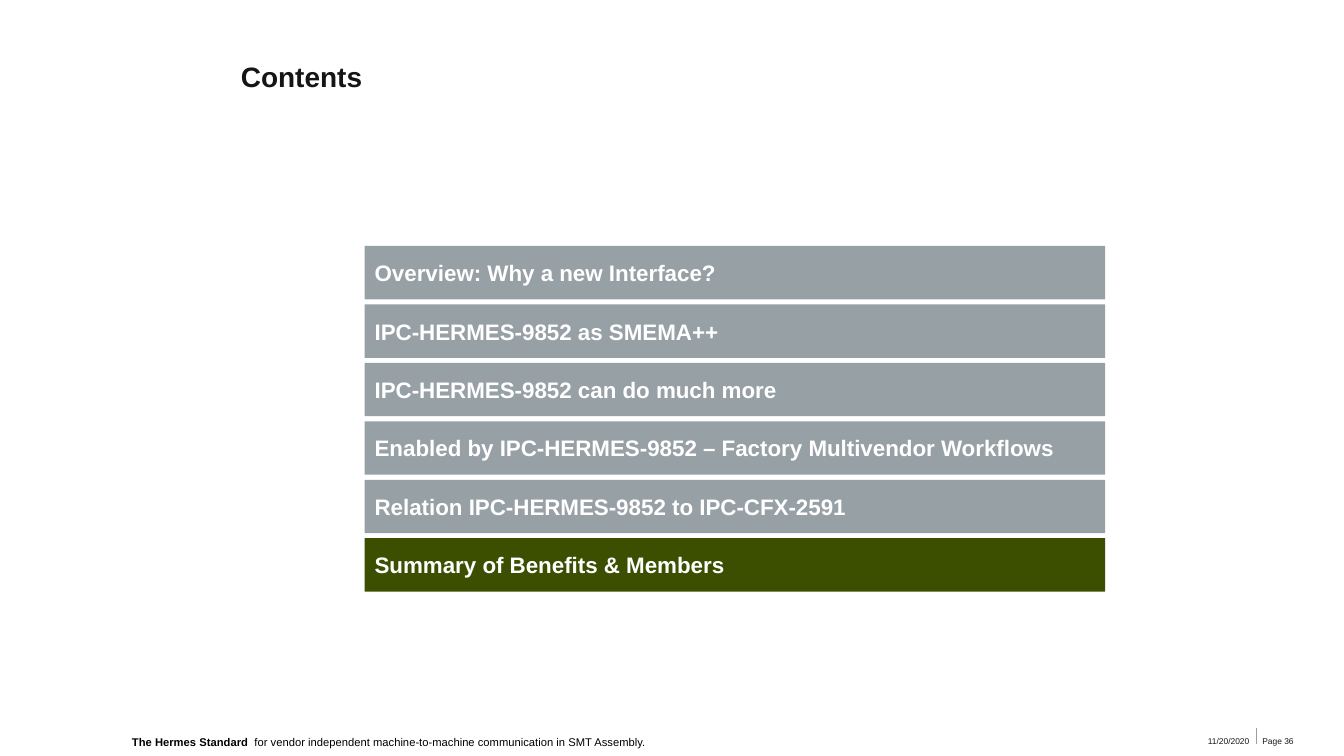
from pptx import Presentation
from pptx.dml.color import RGBColor as RGB
from pptx.enum.shapes import MSO_CONNECTOR as CONN, MSO_SHAPE as SHAPE
from pptx.enum.text import MSO_ANCHOR as ANCHOR, PP_ALIGN as ALIGN
from pptx.oxml.ns import qn
from pptx.util import Inches, Pt

COLORS = {"gray": "97A0A5", "green": "3C4F00", "white": "FFFFFF",
          "ink": "151517", "black": "000000"}
TOPICS = [
    "Overview: Why a new Interface?",
    "IPC-HERMES-9852 as SMEMA++",
    "IPC-HERMES-9852 can do much more",
    "Enabled by IPC-HERMES-9852 – Factory Multivendor Workflows",
    "Relation IPC-HERMES-9852 to IPC-CFX-2591",
    "Summary of Benefits & Members",
]
CURRENT = "Summary of Benefits & Members"
BAR_TOP, BAR_PITCH = 2.44, 0.58


class Deck:
    font = "Arial"

    def __init__(self, width, height):
        self.prs = Presentation()
        self.prs.slide_width = Inches(width)
        self.prs.slide_height = Inches(height)
        self.slide = self.prs.slides.add_slide(self.prs.slide_layouts[6])

    def color(self, name):
        return RGB.from_string(COLORS[name])

    def fill_text(self, sp, runs, size, color, anchor, insets, align=ALIGN.LEFT):
        tf = sp.text_frame
        tf.word_wrap = True
        tf.vertical_anchor = anchor
        tf.margin_left, tf.margin_top, tf.margin_right, tf.margin_bottom = map(Inches, insets)
        p = tf.paragraphs[0]
        p.alignment = align
        for text, bold in runs:
            r = p.add_run()
            r.text = text
            r.font.name = self.font
            r.font.size = Pt(size)
            r.font.bold = bold
            r.font.color.rgb = self.color(color)

    def text(self, box, runs, size, color, anchor, insets, align=ALIGN.LEFT):
        sp = self.slide.shapes.add_textbox(*map(Inches, box))
        self.fill_text(sp, runs, size, color, anchor, insets, align)

    def bar(self, box, fill, runs, size, color, insets):
        sp = self.slide.shapes.add_shape(SHAPE.RECTANGLE, *map(Inches, box))
        sp.shadow.inherit = False
        sp.fill.solid()
        sp.fill.fore_color.rgb = self.color(fill)
        sp.line.fill.background()
        self.fill_text(sp, runs, size, color, ANCHOR.MIDDLE, insets)

    def line(self, ends, color, width):
        cx = self.slide.shapes.add_connector(CONN.STRAIGHT, *map(Inches, ends))
        cx.line.color.rgb = self.color(color)
        cx.line.width = Pt(width)
        spPr = cx._element.spPr
        spPr.append(spPr.makeelement(qn("a:effectLst"), {}))


def main():
    deck = Deck(13.34, 7.5)
    deck.line((12.47, 7.22, 12.47, 7.38), "gray", 0.75)
    deck.bar((1.27, 7.29, 6.27, 0.15), "white",
             [("The Hermes Standard ", True),
              (" for vendor independent machine-to-machine communication in SMT Assembly.", False)],
             8, "black", (0.04, 0, 0.04, 0))
    deck.text((1.92, 0.13, 11.42, 1.25), [("Contents", True)], 20, "ink",
              ANCHOR.MIDDLE, (0.47, 0.07, 0.13, 0.07))
    for left, width, text, align in [(10.99, 1.41, "11/20/2020", ALIGN.RIGHT),
                                     (12.53, 0.68, "Page 36", ALIGN.LEFT)]:
        deck.text((left, 7.24, width, 0.22), [(text, False)], 6, "ink",
                  ANCHOR.BOTTOM, (0, 0, 0, 0.06), align)
    for i, topic in enumerate(TOPICS):
        fill = "green" if topic == CURRENT else "gray"
        deck.bar((3.62, BAR_TOP + i * BAR_PITCH, 7.35, 0.53), fill,
                 [(topic, True)], 16, "white", (0.1, 0.05, 0.1, 0.05))
    deck.prs.save("out.pptx")


if __name__ == "__main__":
    main()
